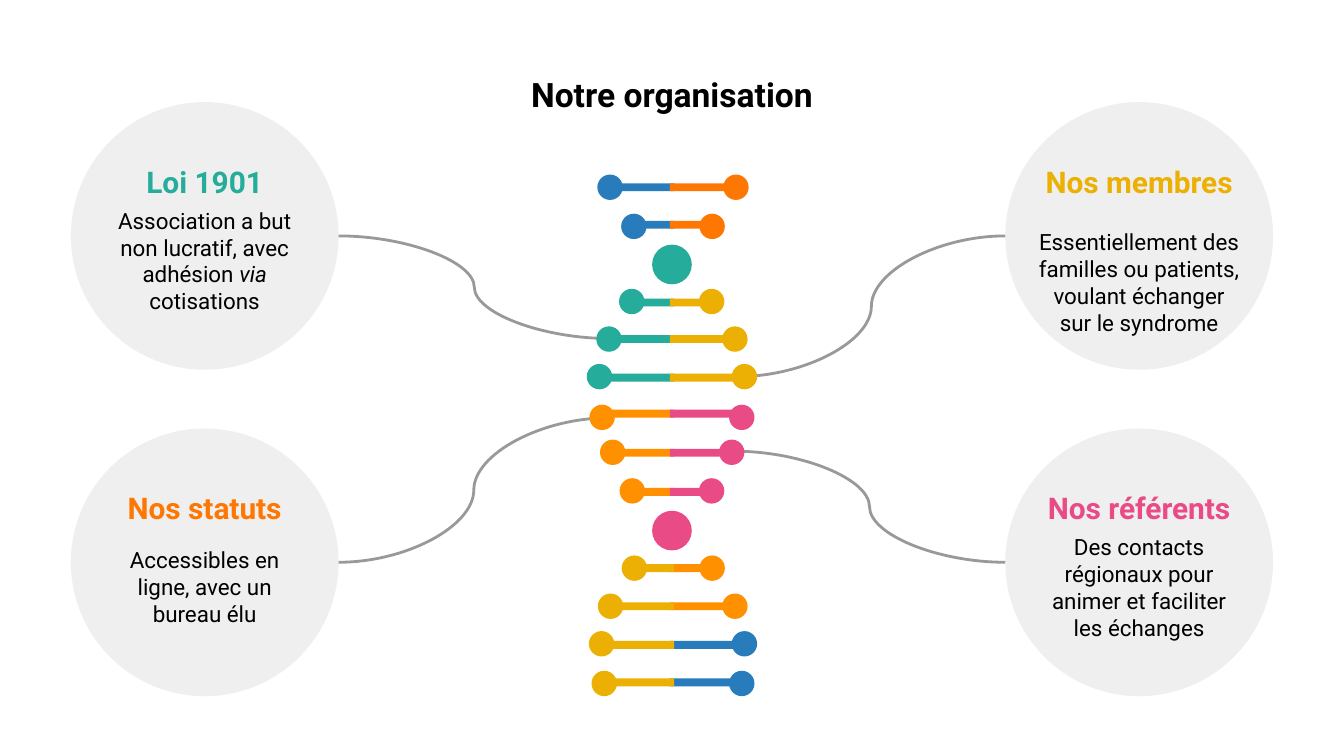
from dataclasses import dataclass

from lxml.etree import SubElement
from pptx import Presentation
from pptx.dml.color import RGBColor
from pptx.enum.shapes import MSO_CONNECTOR, MSO_SHAPE
from pptx.enum.text import MSO_ANCHOR, PP_ALIGN
from pptx.oxml.ns import qn
from pptx.slide import Slide
from pptx.util import Cm, Pt


@dataclass(frozen=True)
class Theme:
    font: str = "Roboto"
    title_size: int = 18
    heading_size: int = 16
    body_size: int = 12
    line_width: float = 1.5
    black: str = "000000"
    disc: str = "EFEFEF"
    link: str = "999999"
    blue: str = "287CBC"
    orange: str = "FE7702"
    amber: str = "FF9000"
    teal: str = "25AC9B"
    yellow: str = "ECB004"
    pink: str = "E94B86"


@dataclass(frozen=True)
class Card:
    left: float
    top: float
    heading: str
    color: str
    body: str
    link_end: tuple[float, float]
    body_offset: float = 1.75
    italic: str = ""


@dataclass(frozen=True)
class Rung:
    dot_y: float
    bar_y: float
    left_x: float
    right_x: float
    reach: float
    left_color: str
    right_color: str


@dataclass(frozen=True)
class Hub:
    y: float
    color: str


THEME = Theme()
AXIS = 12.7
SEAM = 0.04
BAR_HEIGHT = 0.15
DOT_SIZE = 0.48
HUB_SIZE = 0.75
DISC_SIZE = 5.06
TEXT_WIDTH = 4.37
SHORT, MEDIUM, LONG = 0.84, 1.05, 1.2
LEFT_COLUMN, RIGHT_COLUMN = 1.34, 19.0
TOP_ROW, BOTTOM_ROW = 1.93, 8.1

CARDS = [
    Card(LEFT_COLUMN, TOP_ROW, "Loi 1901", THEME.teal,
         "Association a but non lucratif, avec adhésion via cotisations",
         (11.53, 6.4), italic="via"),
    Card(LEFT_COLUMN, BOTTOM_ROW, "Nos statuts", THEME.orange,
         "Accessibles en ligne, avec un bureau élu", (11.51, 7.9)),
    Card(RIGHT_COLUMN, TOP_ROW, "Nos membres", THEME.yellow,
         "Essentiellement des familles ou patients, voulant échanger sur le syndrome",
         (13.94, 7.12), body_offset=2.16),
    Card(RIGHT_COLUMN, BOTTOM_ROW, "Nos référents", THEME.pink,
         "Des contacts régionaux pour animer et faciliter les échanges", (13.87, 8.53)),
]

RUNGS = [
    Rung(3.54, 3.54, 11.53, 13.91, MEDIUM, THEME.blue, THEME.orange),
    Rung(4.28, 4.25, 11.98, 13.46, SHORT, THEME.blue, THEME.orange),
    Rung(5.7, 5.72, 11.94, 13.45, SHORT, THEME.teal, THEME.yellow),
    Rung(6.41, 6.41, 11.51, 13.89, MEDIUM, THEME.teal, THEME.yellow),
    Rung(7.12, 7.14, 11.33, 14.07, LONG, THEME.teal, THEME.yellow),
    Rung(7.89, 7.82, 11.38, 14.02, LONG, THEME.amber, THEME.pink),
    Rung(8.55, 8.56, 11.58, 13.83, LONG, THEME.amber, THEME.pink),
    Rung(9.28, 9.3, 11.95, 13.45, SHORT, THEME.amber, THEME.pink),
    Rung(10.74, 10.74, 11.99, 13.46, SHORT, THEME.yellow, THEME.amber),
    Rung(11.46, 11.46, 11.54, 13.89, LONG, THEME.yellow, THEME.amber),
    Rung(12.17, 12.19, 11.37, 14.07, LONG, THEME.yellow, THEME.blue),
    Rung(12.92, 12.9, 11.42, 14.02, LONG, THEME.yellow, THEME.blue),
]

HUBS = [Hub(5.0, THEME.teal), Hub(10.03, THEME.pink)]


def add_filled(slide: Slide, kind: MSO_SHAPE, left: float, top: float,
               width: float, height: float, color: str) -> None:
    shape = slide.shapes.add_shape(kind, Cm(left), Cm(top), Cm(width), Cm(height))
    shape.shadow.inherit = False
    shape.fill.solid()
    shape.fill.fore_color.rgb = RGBColor.from_string(color)
    shape.line.fill.background()


def add_circle(slide: Slide, x: float, y: float, size: float, color: str) -> None:
    add_filled(slide, MSO_SHAPE.OVAL, x - size / 2, y - size / 2, size, size, color)


def add_text(slide: Slide, text: str, *, left: float, top: float, width: float,
             height: float, size: int, color: str = THEME.black, bold: bool = False,
             italic: str = "", anchor: MSO_ANCHOR = MSO_ANCHOR.MIDDLE) -> None:
    box = slide.shapes.add_textbox(Cm(left), Cm(top), Cm(width), Cm(height))
    frame = box.text_frame
    frame.word_wrap = True
    frame.vertical_anchor = anchor
    frame.margin_left = frame.margin_right = Cm(0.25)
    frame.margin_top = frame.margin_bottom = Cm(0.25)
    paragraph = frame.paragraphs[0]
    paragraph.alignment = PP_ALIGN.CENTER
    pieces = text.partition(italic) if italic else (text,)
    for piece in pieces:
        run = paragraph.add_run()
        run.text = piece
        run.font.name = THEME.font
        run.font.size = Pt(size)
        run.font.bold = bold
        run.font.italic = piece == italic
        run.font.color.rgb = RGBColor.from_string(color)


def add_link(slide: Slide, card: Card) -> None:
    start_x = card.left + DISC_SIZE if card.left < AXIS else card.left
    end_x, end_y = card.link_end
    connector = slide.shapes.add_connector(
        MSO_CONNECTOR.CURVE, Cm(start_x), Cm(card.top + DISC_SIZE / 2), Cm(end_x), Cm(end_y))
    connector.line.color.rgb = RGBColor.from_string(THEME.link)
    connector.line.width = Pt(THEME.line_width)
    SubElement(connector.element.spPr, qn("a:effectLst"))


def add_card(slide: Slide, card: Card) -> None:
    add_filled(slide, MSO_SHAPE.OVAL, card.left, card.top, DISC_SIZE, DISC_SIZE, THEME.disc)
    add_link(slide, card)
    text_left = card.left + (DISC_SIZE - TEXT_WIDTH) / 2
    add_text(slide, card.body, left=text_left, top=card.top + card.body_offset,
             width=TEXT_WIDTH, height=2.49, size=THEME.body_size, italic=card.italic)
    add_text(slide, card.heading, left=text_left, top=card.top + 1.05, width=TEXT_WIDTH,
             height=0.89, size=THEME.heading_size, color=card.color, bold=True)


def add_rung(slide: Slide, rung: Rung) -> None:
    bars = [(AXIS - rung.reach, rung.left_color), (AXIS - SEAM, rung.right_color)]
    if rung.bar_y > HUBS[-1].y:
        bars.reverse()
    for left, color in bars:
        add_filled(slide, MSO_SHAPE.RECTANGLE, left, rung.bar_y - BAR_HEIGHT / 2,
                   rung.reach + SEAM, BAR_HEIGHT, color)
    add_circle(slide, rung.left_x, rung.dot_y, DOT_SIZE, rung.left_color)
    add_circle(slide, rung.right_x, rung.dot_y, DOT_SIZE, rung.right_color)


def main() -> None:
    presentation = Presentation()
    presentation.slide_width = Cm(25.4)
    presentation.slide_height = Cm(14.29)
    slide = presentation.slides.add_slide(presentation.slide_layouts[6])
    for card in CARDS:
        add_card(slide, card)
    add_text(slide, "Notre organisation", left=1.27, top=1.14, width=22.86, height=0.94,
             size=THEME.title_size, bold=True, anchor=MSO_ANCHOR.TOP)
    for rung in RUNGS:
        add_rung(slide, rung)
    for hub in HUBS:
        add_circle(slide, AXIS, hub.y, HUB_SIZE, hub.color)
    presentation.save("out.pptx")


if __name__ == "__main__":
    main()
